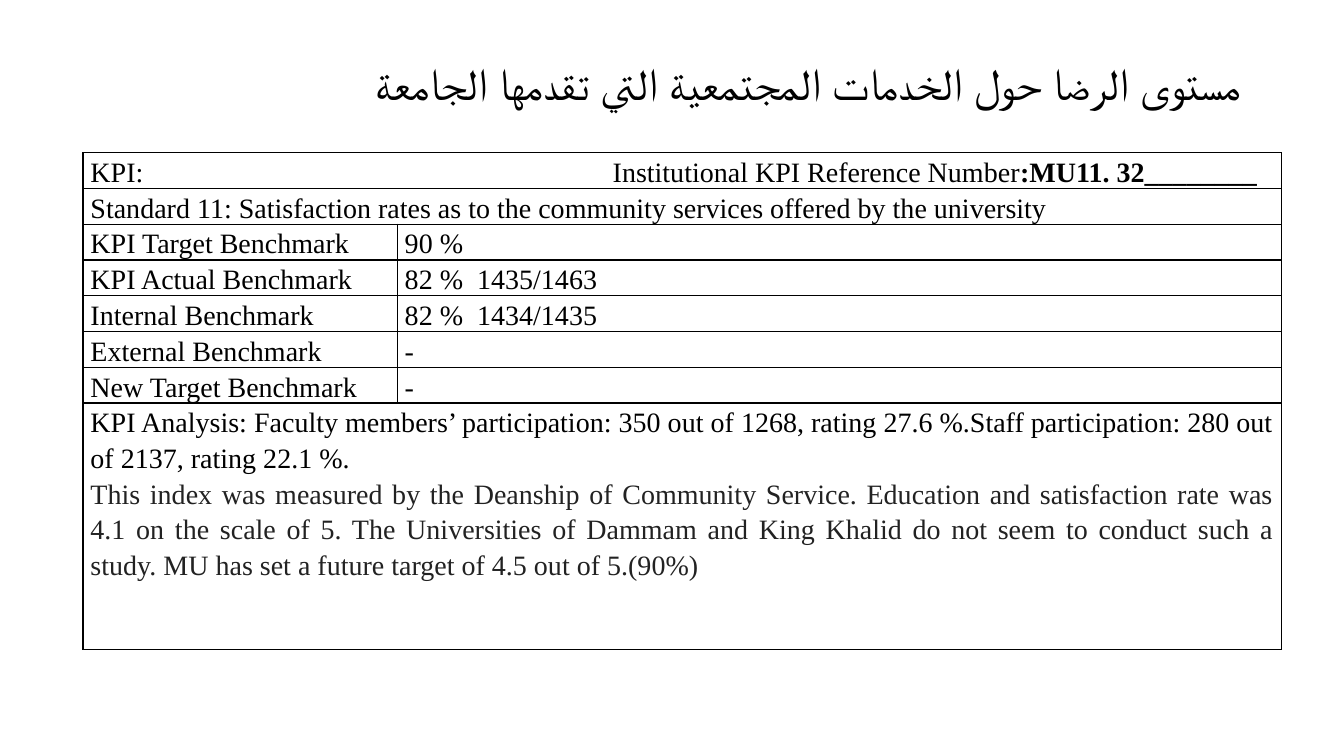
from lxml.etree import SubElement
from pptx import Presentation
from pptx.dml.color import RGBColor
from pptx.enum.text import MSO_ANCHOR, PP_ALIGN
from pptx.oxml.ns import qn
from pptx.util import Cm, Pt

# Content: each row lists its cells, each cell its paragraphs
TITLE = "مستوى الرضا حول الخدمات المجتمعية التي تقدمها الجامعة"
REFERENCE = ":MU11. 32________"
ROWS = [
    [["KPI:\tInstitutional KPI Reference Number"]],
    [["Standard 11: Satisfaction rates as to the community services offered by the university"]],
    [["KPI Target Benchmark"], ["90 %"]],
    [["KPI Actual Benchmark"], ["82 %  1435/1463"]],
    [["Internal Benchmark"], ["82 %  1434/1435"]],
    [["External Benchmark"], ["-"]],
    [["New Target Benchmark"], ["-"]],
    [[
        "KPI Analysis: Faculty members’ participation: 350 out of 1268, rating 27.6 %."
        "Staff participation: 280 out of 2137, rating 22.1 %.",
        "This index was measured by the Deanship of Community Service. Education and "
        "satisfaction rate was 4.1 on the scale of 5. The Universities of Dammam and "
        "King Khalid do not seem to conduct such a study. MU has set a future target "
        "of 4.5 out of 5.(90%)",
    ]],
]
COLUMN_WIDTHS = [Cm(7.92), Cm(22.28)]
ROW_HEIGHT, ANALYSIS_HEIGHT = Cm(0.9), Cm(6.2)
REFERENCE_TAB = Cm(13.16)
BLACK, GREY = "000000", "222222"


def color(value):
    return RGBColor.from_string(value)


def format_run(run, size, font_name, font_color, bold=False):
    run.font.size = Pt(size)
    run.font.name = font_name
    run.font.bold = bold
    run.font.color.rgb = color(font_color)


def add_borders(cell):
    properties = cell._tc.get_or_add_tcPr()
    for side in ("lnL", "lnR", "lnT", "lnB"):
        line = SubElement(properties, qn(f"a:{side}"), w=str(Pt(1)))
        fill = SubElement(line, qn("a:solidFill"))
        SubElement(fill, qn("a:srgbClr"), val=BLACK)


def fill_cell(cell, texts):
    cell.margin_left = cell.margin_right = Cm(0.19)
    cell.margin_top = cell.margin_bottom = 0
    text_frame = cell.text_frame
    text_frame.text = "\n".join(texts)
    for paragraph in text_frame.paragraphs:
        paragraph.line_spacing = 1.15
        paragraph.space_after = Pt(0 if len(texts) > 1 else 10)
        paragraph.alignment = PP_ALIGN.JUSTIFY if len(texts) > 1 else PP_ALIGN.LEFT
        for run in paragraph.runs:
            format_run(run, 20, "Times New Roman", BLACK)


presentation = Presentation()
presentation.slide_width, presentation.slide_height = Cm(33.87), Cm(19.05)
slide = presentation.slides.add_slide(presentation.slide_layouts[5])

# Right-to-left title
title = slide.shapes.title
title.left, title.top, title.width, title.height = Cm(2.33), Cm(1.01), Cm(29.21), Cm(2.31)
title.text_frame.text = TITLE
title.text_frame.vertical_anchor = MSO_ANCHOR.MIDDLE
heading = title.text_frame.paragraphs[0]
heading.alignment = PP_ALIGN.RIGHT
heading.line_spacing = 0.9
heading._p.get_or_add_pPr().set("rtl", "1")
format_run(heading.runs[0], 32, "Calibri", BLACK)

# Table grid
row_heights = [ROW_HEIGHT] * (len(ROWS) - 1) + [ANALYSIS_HEIGHT]
table = slide.shapes.add_table(
    len(ROWS), len(COLUMN_WIDTHS), Cm(2.09), Cm(3.85), sum(COLUMN_WIDTHS), sum(row_heights)
).table
table.first_row = table.horz_banding = False
for column, width in zip(table.columns, COLUMN_WIDTHS):
    column.width = width
for row, height in zip(table.rows, row_heights):
    row.height = height

# Table cells; single-cell rows span the full width
for row_index, row_content in enumerate(ROWS):
    if len(row_content) == 1:
        table.cell(row_index, 0).merge(table.cell(row_index, 1))
    for column_index, texts in enumerate(row_content):
        fill_cell(table.cell(row_index, column_index), texts)
    for cell in table.rows[row_index].cells:
        add_borders(cell)
        cell.fill.background()

# Reference number after a tab stop, in bold
reference_paragraph = table.cell(0, 0).text_frame.paragraphs[0]
tab_list = SubElement(reference_paragraph._p.get_or_add_pPr(), qn("a:tabLst"))
SubElement(tab_list, qn("a:tab"), pos=str(REFERENCE_TAB), algn="l")
reference_run = reference_paragraph.add_run()
reference_run.text = REFERENCE
format_run(reference_run, 20, "Times New Roman", BLACK, bold=True)

# Grey closing remark
remark = table.cell(len(ROWS) - 1, 0).text_frame.paragraphs[1]
remark.runs[0].font.color.rgb = color(GREY)

presentation.save("out.pptx")
